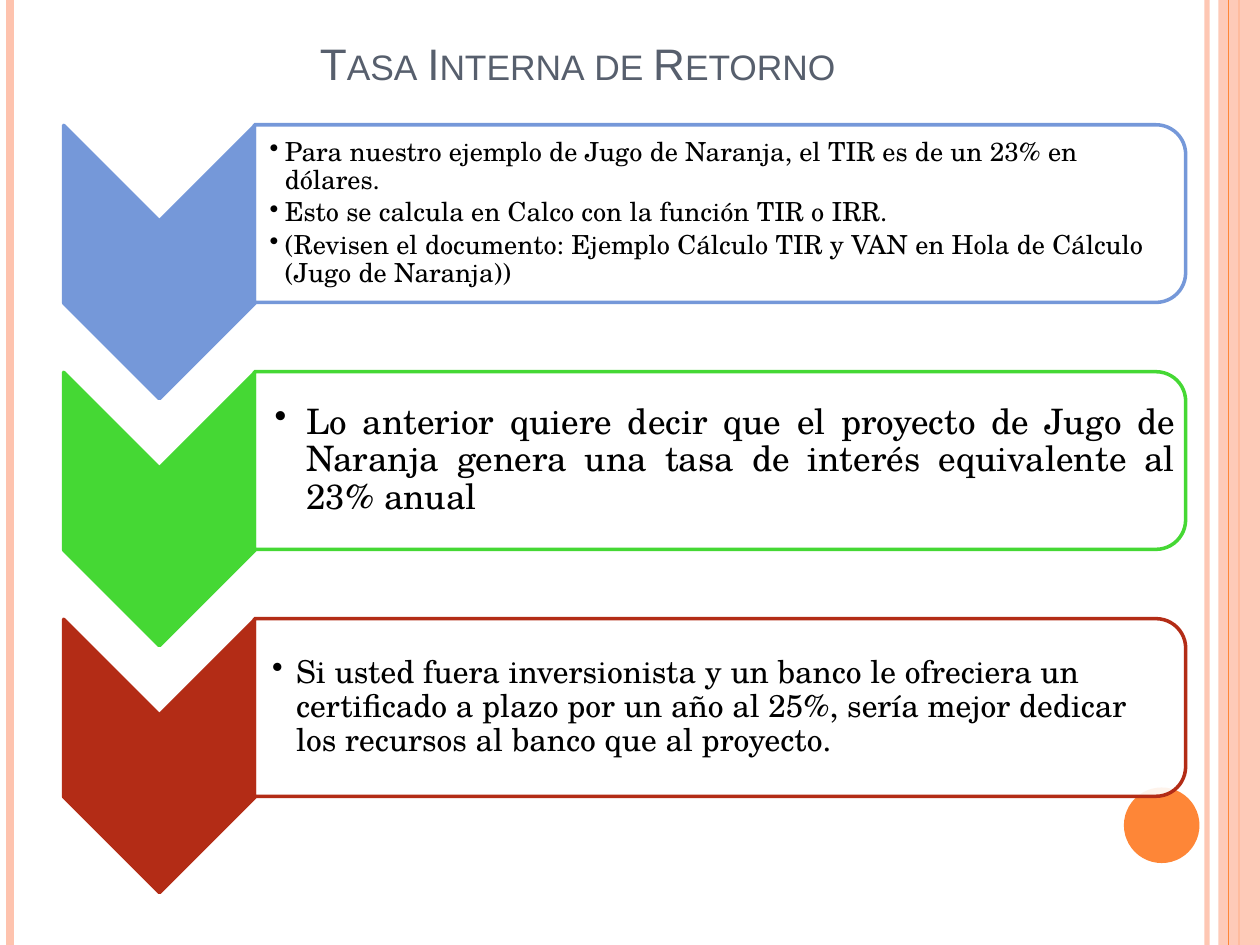
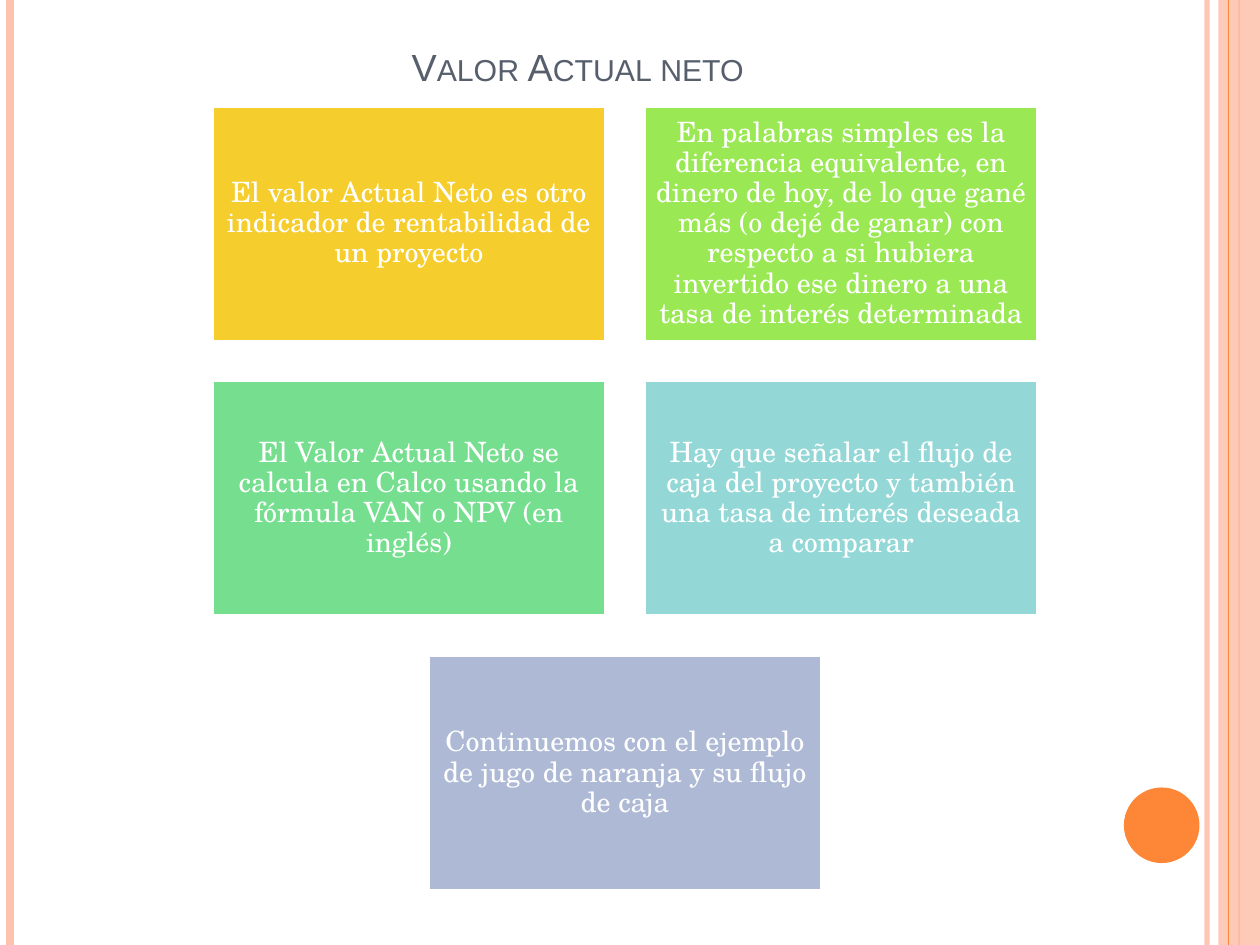
from pptx import Presentation
from pptx.dml.color import RGBColor
from pptx.enum.shapes import MSO_CONNECTOR as Link, MSO_SHAPE as Kind
from pptx.enum.text import MSO_ANCHOR as Anchor, PP_ALIGN as Align
from pptx.oxml.ns import qn
from pptx.util import Inches, Pt
from lxml.etree import SubElement

WHITE = RGBColor(0xFF, 0xFF, 0xFF)
BLACK = RGBColor(0x00, 0x00, 0x00)
SLATE = RGBColor(0x57, 0x5F, 0x6D)
PEACH = RGBColor(0xFE, 0xC3, 0xAE)
ORANGE = RGBColor(0xFE, 0x86, 0x37)
BLUE = RGBColor(0x75, 0x98, 0xD9)
GREEN = RGBColor(0x45, 0xD8, 0x34)
RED = RGBColor(0xB3, 0x2C, 0x16)
YELLOW = RGBColor(0xF5, 0xCD, 0x2D)
LIME = RGBColor(0x9A, 0xE8, 0x53)
MINT = RGBColor(0x75, 0xDE, 0x8F)
AQUA = RGBColor(0x93, 0xD8, 0xD6)
LILAC = RGBColor(0xAE, 0xBA, 0xD5)

HEAD = "Arial"
BODY = "TeX Gyre Schola"
WIDTH, HEIGHT = 10, 7.5

STEPS = [
    (BLUE, 15, 0.12, 0.12, Align.LEFT, [
        "Para nuestro ejemplo de Jugo de Naranja, el TIR es de un 23% en dólares.",
        "Esto se calcula en Calco con la función TIR o IRR.",
        "(Revisen el documento: Ejemplo Cálculo TIR y VAN en Hola de Cálculo "
        "(Jugo de Naranja))"]),
    (GREEN, 20, 0.16, 0.25, Align.JUSTIFY, [
        "Lo anterior quiere decir que el proyecto de Jugo de Naranja genera "
        "una tasa de interés equivalente al 23% anual"]),
    (RED, 18, 0.14, 0.19, Align.LEFT, [
        "Si usted fuera inversionista y un banco le ofreciera un certificado a "
        "plazo por un año al 25%, sería mejor dedicar los recursos al banco "
        "que al proyecto."]),
]

CARDS = [
    (YELLOW, "El valor Actual Neto es otro indicador de rentabilidad de un proyecto"),
    (LIME, "En palabras simples es la diferencia equivalente, en dinero de hoy, "
           "de lo que gané más (o dejé de ganar) con respecto a si hubiera "
           "invertido ese dinero a una tasa de interés determinada"),
    (MINT, "El Valor Actual Neto se calcula en Calco usando la fórmula VAN o NPV "
           "(en inglés)"),
    (AQUA, "Hay que señalar el flujo de caja del proyecto y también una tasa de "
           "interés deseada a comparar"),
    (LILAC, "Continuemos con el ejemplo de jugo de naranja y su flujo de caja"),
]


class Deck:
    """Holds the presentation, its style and the current slide."""

    def __init__(self):
        self.prs = Presentation()
        self.prs.slide_width = Inches(WIDTH)
        self.prs.slide_height = Inches(HEIGHT)
        self.slide = None

    def start(self, title, size):
        """Add a slide with the shared side bands, dot and title."""
        self.slide = self.prs.slides.add_slide(self.prs.slide_layouts[6])
        self.line(9.58, PEACH, 3, 93)
        self.line(0.08, PEACH, 4.5)
        edge = self.line(9.83, ORANGE, 1.5)
        band = self.shape(Kind.RECTANGLE, (9.67, 0, 0.33, HEIGHT), PEACH, alpha=87)
        edge.begin_connect(band, 0)
        edge.end_connect(band, 2)
        self.line(9.75, ORANGE, 0.75)
        self.shape(Kind.OVAL, (8.92, 6.25, 0.6, 0.6), ORANGE)
        self.title(title, size)

    def fade(self, fill, alpha):
        """Make a solid fill partly transparent."""
        color = next(fill.iter(qn("a:srgbClr")))
        SubElement(color, qn("a:alpha")).set("val", str(alpha * 1000))

    def line(self, x, color, width, alpha=None):
        """Draw a line down the whole slide."""
        line = self.slide.shapes.add_connector(
            Link.STRAIGHT, Inches(x), Inches(0), Inches(x), Inches(HEIGHT))
        line.line.color.rgb = color
        line.line.width = Pt(width)
        props = line._element.spPr
        if alpha:
            self.fade(props.find(qn("a:ln")), alpha)
        SubElement(props, qn("a:effectLst"))
        return line

    def shape(self, kind, box, fill, edge=None, alpha=None, turn=0):
        """Draw a filled preset shape."""
        shape = self.slide.shapes.add_shape(kind, *map(Inches, box))
        shape.shadow.inherit = False
        shape.rotation = turn
        shape.fill.solid()
        shape.fill.fore_color.rgb = fill
        if alpha:
            self.fade(shape._element.spPr.find(qn("a:solidFill")), alpha)
        if edge is None:
            shape.line.fill.background()
        else:
            shape.line.color.rgb = edge
            shape.line.width = Pt(2)
        return shape

    def frame(self, shape, pads, anchor=Anchor.MIDDLE):
        """Prepare the text frame of a shape."""
        frame = shape.text_frame
        frame.word_wrap = True
        frame.vertical_anchor = anchor
        (frame.margin_left, frame.margin_top,
         frame.margin_right, frame.margin_bottom) = map(Inches, pads)
        return frame

    def style(self, para, face, size, color, align):
        """Set font and alignment of a paragraph."""
        para.alignment = align
        font = para.font
        font.name, font.size, font.color.rgb = face, Pt(size), color
        return font

    def title(self, text, size):
        """Write the slide title in small capitals."""
        box = self.slide.shapes.add_textbox(*map(Inches, (0.5, 0.3, 8.17, 0.46)))
        frame = self.frame(box, (0.1, 0.05, 0.1, 0.05), Anchor.BOTTOM)
        frame.text = text
        font = self.style(frame.paragraphs[0], HEAD, size, SLATE, Align.CENTER)
        font._element.set("cap", "small")

    def bullets(self, box, items, size, pad, hang, align):
        """Write a bulleted list."""
        area = self.slide.shapes.add_textbox(*map(Inches, box))
        frame = self.frame(area, (pad, 0.01, 0.01, 0.01))
        frame.text = "\n".join(items)
        for para in frame.paragraphs:
            para.line_spacing = 0.9
            para.space_after = Pt(size * 0.15)
            props = para._p.get_or_add_pPr()
            props.set("marL", str(Inches(hang)))
            props.set("indent", str(-Inches(hang)))
            SubElement(props, qn("a:buChar")).set("char", "•")
            self.style(para, BODY, size, BLACK, align)

    def step(self, top, color, size, pad, hang, align, items):
        """Draw a down chevron with its text panel."""
        self.shape(Kind.CHEVRON, (0.18, top + 0.33, 2.17, 1.52), color, color, turn=90)
        self.shape(Kind.ROUND_2_SAME_RECTANGLE, (5.01, top - 2.99, 1.41, 7.39),
                   WHITE, color, 90, 90)
        self.bullets((2.02, top + 0.07, 7.32, 1.27), items, size, pad, hang, align)

    def card(self, x, y, wide, high, color, text):
        """Draw a coloured box with centred text."""
        shape = self.shape(Kind.RECTANGLE, (x, y, wide, high), color, WHITE)
        frame = self.frame(shape, (0.07,) * 4)
        frame.text = text
        para = frame.paragraphs[0]
        para.line_spacing = 0.9
        self.style(para, BODY, 16, WHITE, Align.CENTER)


def main():
    """Build both slides and save them."""
    deck = Deck()

    deck.start("Tasa Interna de Retorno", 25.2)
    for row, step in enumerate(STEPS):
        deck.step(0.99 + row * 1.96, *step)

    deck.start("Valor Actual neto", 21.6)
    wide, high, gap, cols = 3.12, 1.87, 0.31, 2
    mid = 4.96
    for num, (color, text) in enumerate(CARDS):
        row, col = divmod(num, cols)
        count = min(cols, len(CARDS) - row * cols)
        left = mid - (count * (wide + gap) - gap) / 2
        deck.card(left + col * (wide + gap), 0.84 + row * (high + gap),
                  wide, high, color, text)

    deck.prs.save("out.pptx")


if __name__ == "__main__":
    main()
